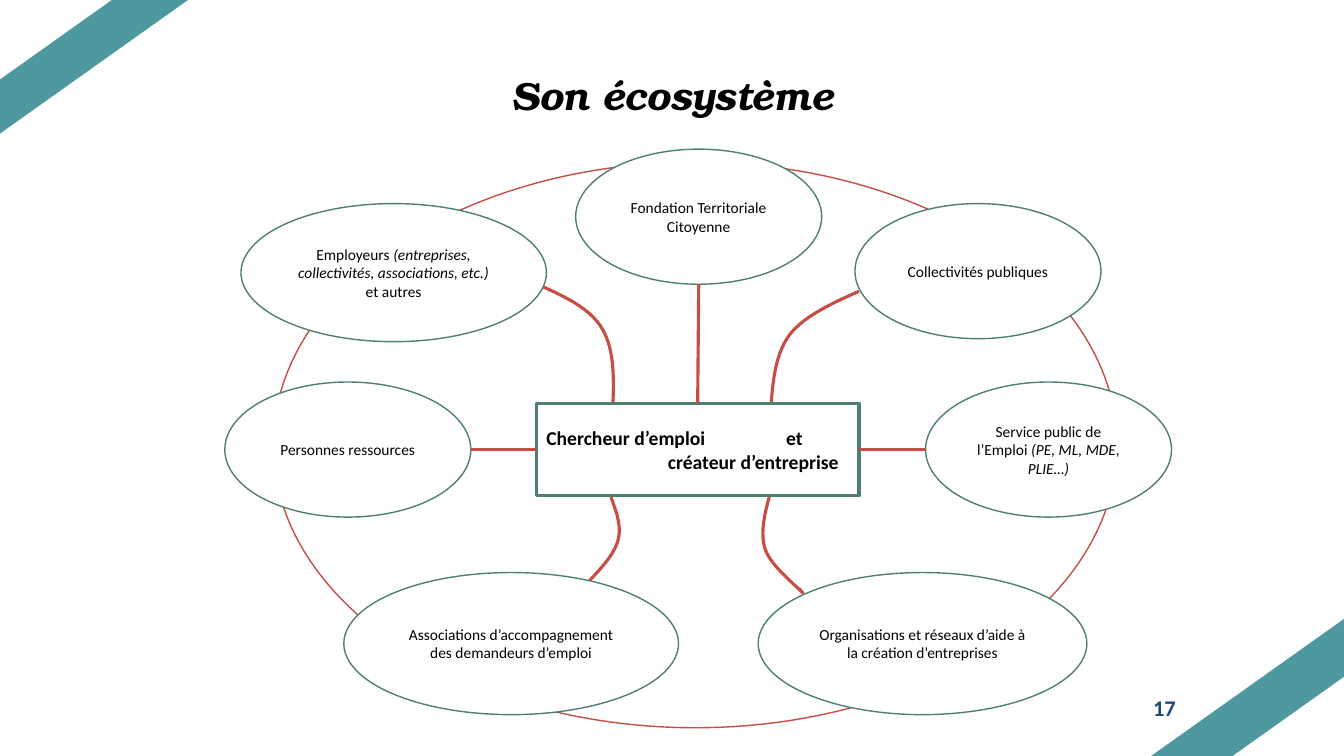
import pptx
import pptx.util
import pptx.dml.color
import pptx.enum.shapes
import pptx.enum.text
import pptx.oxml.ns
import lxml.etree

Inches, Pt = pptx.util.Inches, pptx.util.Pt
KIND = pptx.enum.shapes.MSO_SHAPE
ALIGN = pptx.enum.text.PP_ALIGN
ANCHOR = pptx.enum.text.MSO_ANCHOR
qn = pptx.oxml.ns.qn

COLORS = {"band": "4E98A0", "link": "C74E45", "edge": "4E806F",
          "white": "FFFFFF", "black": "000000", "page": "1F497D"}

TITLE = "Son écosystème"
PAGE = "17"
BANDS = [(-0.64, 0.28, 2.89, 0.41), (11.2, 6.68, 2.93, 0.44)]
TILT = 324.6
RING = (2.71, 1.61, 8.37, 5.61)

# Place, then text runs as (text, italic)
ACTORS = [
    ((7.52, 5.68, 3.26, 1.41),
     [("Organisations et réseaux d’aide à la création d’entreprises", False)]),
    ((2.39, 2.02, 3.03, 1.37),
     [("Employeurs ", False),
      ("(entreprises, collectivités, associations, etc.)", True),
      (" et autres", False)]),
    ((2.23, 3.79, 2.44, 1.34), [("Personnes ressources", False)]),
    ((5.71, 1.48, 2.44, 1.34), [("Fondation Territoriale Citoyenne", False)]),
    ((3.41, 5.68, 3.32, 1.41),
     [("Associations d’accompagnement des demandeurs d’emploi", False)]),
    ((9.18, 3.79, 2.44, 1.34),
     [("Service public de l’Emploi ", False), ("(PE, ML, MDE, PLIE…)", True)]),
    ((8.48, 2.02, 2.44, 1.34), [("Collectivités publiques", False)]),
]
CENTRE = (5.32, 4, 3.2, 0.92)
CORE = [("Chercheur d’emploi\tet", ALIGN.LEFT),
        ("créateur d’entreprise", ALIGN.RIGHT)]
CORE_TAB = 2.38

# Start point, then cubic segments: two controls and an end
CURVES = [
    [(6.08, 3.99), (6.09, 3.72), (6.09, 3.44), (5.96, 3.24),
     (5.83, 3.04), (5.57, 2.93), (5.31, 2.81)],
    [(7.65, 3.99), (7.67, 3.74), (7.7, 3.49), (7.84, 3.31),
     (7.99, 3.13), (8.25, 3.01), (8.52, 2.89)],
    [(6.06, 4.93), (6.11, 5.07), (6.17, 5.22), (6.13, 5.36),
     (6.09, 5.51), (5.95, 5.65), (5.82, 5.79)],
    [(7.63, 4.93), (7.58, 5.11), (7.54, 5.3), (7.59, 5.45),
     (7.64, 5.6), (7.87, 5.79), (7.93, 5.85),
     (7.99, 5.91), (7.96, 5.88), (7.93, 5.84)],
]
# Side of the centre box, far end
SPOKES = [(0, (6.93, 2.82)), (3, (9.18, 4.46)), (1, (4.67, 4.46))]
STEPS = 12

BODY = {"name": "Calibri", "size": Pt(11)}
STRONG = {"name": "Calibri", "size": Pt(14), "bold": True}
HEAD = {"name": "TeX Gyre Bonum", "size": Pt(28), "bold": True, "italic": True}
FOOT = {"name": "Calibri", "size": Pt(16), "bold": True}


def rgb(name):
    return pptx.dml.color.RGBColor.from_string(COLORS[name])


def put(target, values):
    for key, value in values.items():
        setattr(target, key, value)


def write(para, text, style, color="black"):
    run = para.add_run()
    run.text = text
    put(run.font, style)
    run.font.color.rgb = rgb(color)


def paint(shape, fill, line, width):
    shape.shadow.inherit = False
    if fill:
        shape.fill.solid()
        shape.fill.fore_color.rgb = rgb(fill)
    else:
        shape.fill.background()
    shape.line.color.rgb = rgb(line)
    shape.line.width = Pt(width)


def draw(shapes, kind, box, fill, line, width):
    shape = shapes.add_shape(kind, *map(Inches, box))
    paint(shape, fill, line, width)
    return shape


def trace(points):
    """Return points along a chain of cubic curves."""
    track = [points[0]]
    for first in range(0, len(points) - 1, 3):
        a, b, c, d = points[first:first + 4]
        for step in range(1, STEPS + 1):
            t = step / STEPS
            u = 1 - t
            track.append(tuple(
                u**3 * p + 3 * u * u * t * q + 3 * u * t * t * r + t**3 * s
                for p, q, r, s in zip(a, b, c, d)))
    return [(Inches(x), Inches(y)) for x, y in track]


def main():
    deck = pptx.Presentation()
    deck.slide_width, deck.slide_height = Inches(13.33), Inches(7.5)
    slide = deck.slides.add_slide(deck.slide_layouts[5])
    shapes = slide.shapes

    for box in BANDS:
        draw(shapes, KIND.RECTANGLE, box, "band", "band", 2).rotation = TILT
    draw(shapes, KIND.OVAL, RING, None, "link", 1)

    for points in CURVES:
        track = trace(points)
        pen = shapes.build_freeform(*track[0], scale=1.0)
        pen.add_line_segments(track[1:], close=False)
        paint(pen.convert_to_shape(), None, "link", 2.25)

    for box, runs in ACTORS:
        oval = draw(shapes, KIND.OVAL, box, "white", "edge", 1)
        put(oval.text_frame, {"word_wrap": True,
                              "vertical_anchor": ANCHOR.MIDDLE})
        para = oval.text_frame.paragraphs[0]
        put(para, {"alignment": ALIGN.CENTER, "space_before": Pt(5),
                   "space_after": Pt(5)})
        for text, slant in runs:
            write(para, text, {**BODY, "italic": slant})

    core = draw(shapes, KIND.RECTANGLE, CENTRE, "white", "edge", 2.25)
    frame = core.text_frame
    put(frame, {"word_wrap": True, "vertical_anchor": ANCHOR.MIDDLE,
                "margin_right": Inches(0.2)})
    for index, (text, align) in enumerate(CORE):
        para = frame.add_paragraph() if index else frame.paragraphs[0]
        para.alignment = align
        write(para, text, STRONG)
    props = frame.paragraphs[0]._p.get_or_add_pPr()
    tabs = lxml.etree.SubElement(props, qn("a:tabLst"))
    lxml.etree.SubElement(tabs, qn("a:tab"),
                          pos=str(Inches(CORE_TAB)), algn="l")

    for side, end in SPOKES:
        x, y = map(Inches, end)
        spoke = shapes.add_connector(
            pptx.enum.shapes.MSO_CONNECTOR.STRAIGHT, x, y, x, y)
        spoke.begin_connect(core, side)
        spoke.line.color.rgb = rgb("link")
        spoke.line.width = Pt(2.25)
        lxml.etree.SubElement(spoke._element.spPr, qn("a:effectLst"))

    title = shapes.title
    put(title, {"left": Inches(2.95), "top": Inches(0.66),
                "width": Inches(7.44), "height": Inches(0.57)})
    put(title.text_frame, {"word_wrap": True, "vertical_anchor": ANCHOR.TOP})
    para = title.text_frame.paragraphs[0]
    para.alignment = ALIGN.CENTER
    write(para, TITLE, HEAD)

    page = shapes.add_textbox(*map(Inches, (8.65, 6.82, 3.11, 0.4)))
    put(page.text_frame, {"word_wrap": True,
                          "vertical_anchor": ANCHOR.MIDDLE})
    para = page.text_frame.paragraphs[0]
    para.alignment = ALIGN.RIGHT
    write(para, PAGE, FOOT, "page")

    deck.save("out.pptx")


if __name__ == "__main__":
    main()
